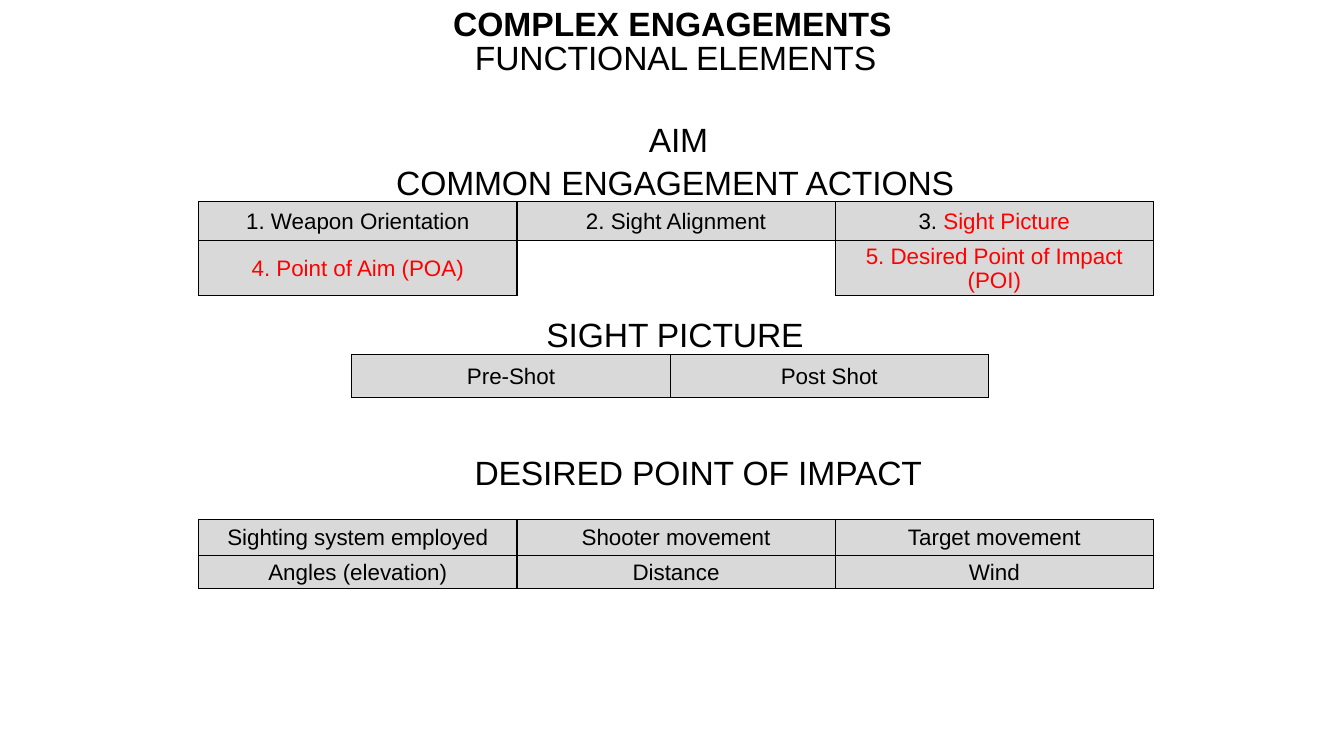
from dataclasses import dataclass

import lxml.etree
import pptx
import pptx.dml.color
import pptx.enum.text
import pptx.oxml.ns
import pptx.util

Inches = pptx.util.Inches
Pt = pptx.util.Pt
COLORS = {"black": "000000", "red": "FF0000", "cell": "D9D9D9"}
FONT = "Arial"
COLUMN_WIDTH = 3.157


@dataclass
class Heading:
    text: str
    left: float
    top: float
    width: float = 13.33
    height: float = 0.42
    inset_top: float = 0.01
    indent: float = 0.06
    bold: bool = False
    spacing: int = -10
    line_spacing: float = 1.0


@dataclass
class Cell:
    black: str = ""
    red: str = ""


@dataclass
class Grid:
    left: float
    top: float
    heights: list[float]
    rows: list[list[Cell]]


HEADINGS = [
    Heading("COMPLEX ENGAGEMENTS", 0, 0.01, height=0.39, inset_top=0,
            indent=0.01, bold=True, spacing=0, line_spacing=1.04),
    Heading("FUNCTIONAL ELEMENTS", 1.67, 0.36, width=10),
    Heading("AIM", 1.7, 1.17, width=10),
    Heading("COMMON ENGAGEMENT ACTIONS", 0, 1.6),
    Heading("SIGHT PICTURE", 0, 3.1),
    Heading("DESIRED POINT OF IMPACT", 0.23, 4.47),
]

GRIDS = [
    Grid(1.97, 2, [0.39, 0.54], [
        [Cell("1. Weapon Orientation"), Cell("2. Sight Alignment"), Cell("3. ", "Sight Picture")],
        [Cell(red="4. Point of Aim (POA)"), Cell(), Cell(red="5. Desired Point of Impact (POI)")],
    ]),
    Grid(3.49, 3.52, [0.42], [[Cell("Pre-Shot"), Cell("Post Shot")]]),
    Grid(1.97, 5.15, [0.36, 0.33], [
        [Cell("Sighting system employed"), Cell("Shooter movement"), Cell("Target movement")],
        [Cell("Angles (elevation)"), Cell("Distance"), Cell("Wind")],
    ]),
]


def rgb(name: str) -> pptx.dml.color.RGBColor:
    return pptx.dml.color.RGBColor.from_string(COLORS[name])


def format_run(r, size: float, color: str, bold: bool = False) -> None:
    r.font.name = FONT
    r.font.size = Pt(size)
    r.font.bold = bold
    r.font.color.rgb = rgb(color)


def add_heading(s, heading: Heading) -> None:
    sp = s.shapes.add_textbox(Inches(heading.left), Inches(heading.top),
                              Inches(heading.width), Inches(heading.height))
    tf = sp.text_frame
    tf.word_wrap = True
    tf.auto_size = pptx.enum.text.MSO_AUTO_SIZE.SHAPE_TO_FIT_TEXT
    tf.margin_left = tf.margin_right = tf.margin_bottom = 0
    tf.margin_top = Inches(heading.inset_top)
    tf.text = heading.text
    p = tf.paragraphs[0]
    p.alignment = pptx.enum.text.PP_ALIGN.CENTER
    p.line_spacing = heading.line_spacing
    p._p.get_or_add_pPr().set("marL", str(Inches(heading.indent)))
    r = p.runs[0]
    format_run(r, 24, "black", heading.bold)
    r._r.get_or_add_rPr().set("spc", str(heading.spacing))


def add_border(cell, side: str, visible: bool) -> None:
    qn = pptx.oxml.ns.qn
    ln = lxml.etree.SubElement(cell._tc.get_or_add_tcPr(), qn(f"a:ln{side}"), w=str(Pt(1)))
    if visible:
        fill = lxml.etree.SubElement(ln, qn("a:solidFill"))
        lxml.etree.SubElement(fill, qn("a:srgbClr"), val=COLORS["black"])
    else:
        lxml.etree.SubElement(ln, qn("a:noFill"))


def fill_cell(cell, content: Cell) -> None:
    empty = not (content.black or content.red)
    for side in "LRTB":
        add_border(cell, side, not (empty and side == "B"))
    cell.margin_left = cell.margin_right = cell.margin_top = Inches(0.01)
    cell.margin_bottom = 0
    cell.vertical_anchor = pptx.enum.text.MSO_ANCHOR.MIDDLE
    if empty:
        cell.fill.background()
        return
    cell.fill.solid()
    cell.fill.fore_color.rgb = rgb("cell")
    p = cell.text_frame.paragraphs[0]
    p.alignment = pptx.enum.text.PP_ALIGN.CENTER
    for text, color in ((content.black, "black"), (content.red, "red")):
        if text:
            r = p.add_run()
            r.text = text
            format_run(r, 16, color)


def add_grid(s, grid: Grid) -> None:
    columns = len(grid.rows[0])
    sp = s.shapes.add_table(len(grid.rows), columns, Inches(grid.left), Inches(grid.top),
                            Inches(columns * COLUMN_WIDTH), Inches(sum(grid.heights)))
    table = sp.table
    table.first_row = table.horz_banding = False
    for column in table.columns:
        column.width = Inches(COLUMN_WIDTH)
    for i, (height, row) in enumerate(zip(grid.heights, grid.rows)):
        table.rows[i].height = Inches(height)
        for j, content in enumerate(row):
            fill_cell(table.cell(i, j), content)


def main() -> None:
    prs = pptx.Presentation()
    prs.slide_width = Inches(13.33)
    prs.slide_height = Inches(7.5)
    s = prs.slides.add_slide(prs.slide_layouts[6])
    for heading in HEADINGS:
        add_heading(s, heading)
    for grid in GRIDS:
        add_grid(s, grid)
    prs.save("out.pptx")


if __name__ == "__main__":
    main()
